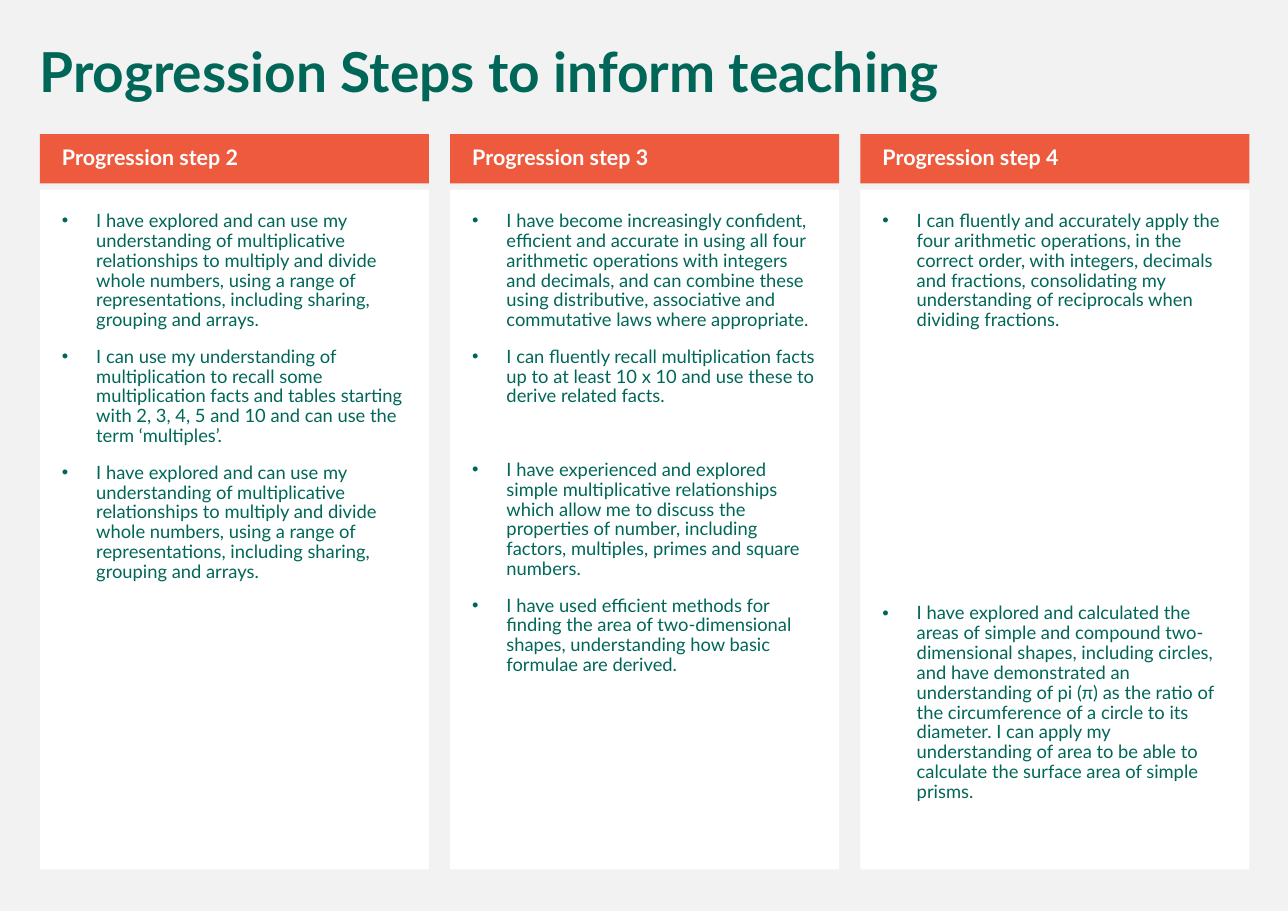
from lxml import etree
from pptx import Presentation
from pptx.dml.color import RGBColor
from pptx.enum.shapes import MSO_SHAPE as SHAPE
from pptx.enum.text import MSO_ANCHOR as ANCHOR, PP_ALIGN as ALIGN
from pptx.oxml.ns import qn
from pptx.util import Cm, Pt

# Content: each statement is (space before in points, text)
TITLE = "Progression Steps to inform teaching"
GAP = 11
COLUMNS = [
    ("Progression step 2", [
        (GAP, "I have explored and can use my understanding of multiplicative relationships to multiply "
              "and divide whole numbers, using a range of representations, including sharing, grouping "
              "and arrays."),
        (GAP, "I can use my understanding of multiplication to recall some multiplication facts and "
              "tables starting with 2, 3, 4, 5 and 10 and can use the term ‘multiples’."),
        (GAP, "I have explored and can use my understanding of multiplicative relationships to multiply "
              "and divide whole numbers, using a range of representations, including sharing, grouping "
              "and arrays."),
    ]),
    ("Progression step 3", [
        (GAP, "I have become increasingly confident, efficient and accurate in using all four arithmetic "
              "operations with integers and decimals, and can combine these using distributive, "
              "associative and commutative laws where appropriate."),
        (GAP, "I can fluently recall multiplication facts up to at least 10 x 10 and use these to derive "
              "related facts."),
        (35, "I have experienced and explored simple multiplicative relationships which allow me to "
             "discuss the properties of number, including factors, multiples, primes and square numbers."),
        (GAP, "I have used efficient methods for finding the area of two-dimensional shapes, "
              "understanding how basic formulae are derived."),
    ]),
    ("Progression step 4", [
        (GAP, "I can fluently and accurately apply the four arithmetic operations, in the correct order, "
              "with integers, decimals and fractions, consolidating my understanding of reciprocals "
              "when dividing fractions."),
        (178.7, "I have explored and calculated the areas of simple and compound two-dimensional shapes, "
                "including circles, and have demonstrated an understanding of pi (π) as the ratio of the "
                "circumference of a circle to its diameter. I can apply my understanding of area to be "
                "able to calculate the surface area of simple prisms."),
    ]),
]

# Style and layout
FONT = "Lato"
GREEN = RGBColor(0x00, 0x67, 0x58)
ORANGE = RGBColor(0xED, 0x5A, 0x3E)
WHITE = RGBColor(0xFF, 0xFF, 0xFF)
GREY = RGBColor(0xF2, 0xF2, 0xF2)
LEFT, STEP, WIDTH = Cm(0.92), Cm(9.46), Cm(8.97)
HEAD_TOP, HEAD_HEIGHT = Cm(3.09), Cm(1.14)
BODY_TOP, BODY_HEIGHT = Cm(4.37), Cm(15.67)
PAD = Cm(0.51)
INDENT = Cm(0.79)


def add_panel(s, left, top, height, color, anchor):
    sp = s.shapes.add_shape(SHAPE.RECTANGLE, left, top, WIDTH, height)
    sp.shadow.inherit = False
    sp.fill.solid()
    sp.fill.fore_color.rgb = color
    sp.line.fill.background()
    tf = sp.text_frame
    tf.word_wrap = True
    tf.vertical_anchor = anchor
    tf.margin_left = PAD
    return tf


def write(p, text, size, color, bold=False, before=GAP):
    p.alignment = ALIGN.LEFT
    p.line_spacing = 0.9
    p.space_before = Pt(before)
    r = p.add_run()
    r.text = text
    r.font.name = FONT
    r.font.size = Pt(size)
    r.font.bold = bold
    r.font.color.rgb = color


def add_bullet(p):
    pPr = p._p.get_or_add_pPr()
    pPr.set("marL", str(INDENT))
    pPr.set("indent", str(-INDENT))
    etree.SubElement(pPr, qn("a:buFont"), typeface="Arial")
    etree.SubElement(pPr, qn("a:buChar"), char="•")


prs = Presentation()
prs.slide_width, prs.slide_height = Cm(29.7), Cm(21)
s = prs.slides.add_slide(prs.slide_layouts[6])
s.background.fill.solid()
s.background.fill.fore_color.rgb = GREY

# Columns
for i, (heading, statements) in enumerate(COLUMNS):
    left = LEFT + i * STEP
    tf = add_panel(s, left, BODY_TOP, BODY_HEIGHT, WHITE, ANCHOR.TOP)
    tf.margin_top = tf.margin_right = tf.margin_bottom = PAD
    for j, (before, text) in enumerate(statements):
        p = tf.add_paragraph() if j else tf.paragraphs[0]
        write(p, text, 12, GREEN, before=before)
        add_bullet(p)
    tf = add_panel(s, left, HEAD_TOP, HEAD_HEIGHT, ORANGE, ANCHOR.MIDDLE)
    write(tf.paragraphs[0], heading, 14, WHITE, bold=True)

# Title
tf = s.shapes.add_textbox(Cm(0.66), Cm(0.91), Cm(28.14), Cm(1.65)).text_frame
tf.word_wrap = True
write(tf.paragraphs[0], TITLE, 36, GREEN, bold=True)

prs.save("out.pptx")
